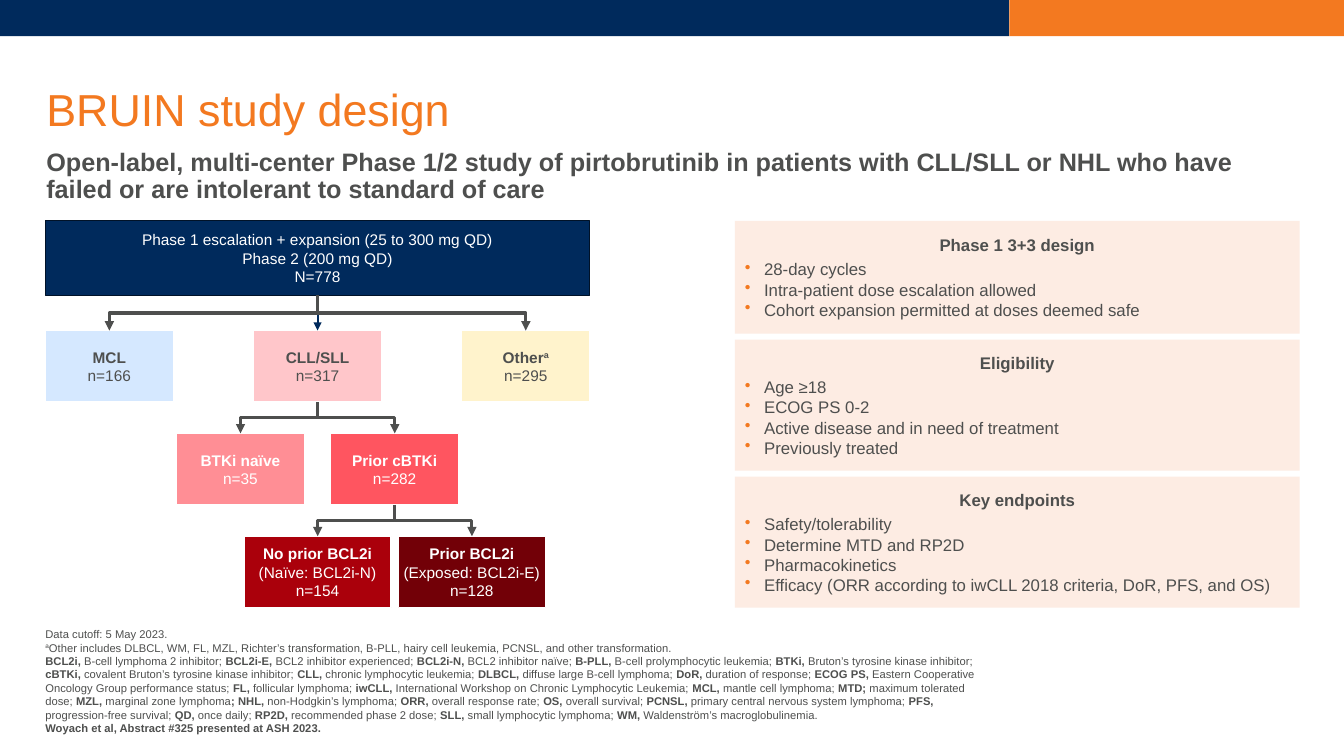
"""Builds the BRUIN study design slide: a patient flow chart beside three panels."""
from dataclasses import dataclass

from lxml import etree
from pptx import Presentation
from pptx.dml.color import RGBColor
from pptx.enum.shapes import MSO_CONNECTOR, MSO_SHAPE
from pptx.enum.text import MSO_ANCHOR, MSO_AUTO_SIZE, PP_ALIGN
from pptx.oxml.ns import qn
from pptx.util import Inches, Pt

RECTANGLE, NO_FIT = MSO_SHAPE.RECTANGLE, MSO_AUTO_SIZE.NONE
STRAIGHT, ELBOW = MSO_CONNECTOR.STRAIGHT, MSO_CONNECTOR.ELBOW
MIDDLE, BOTTOM = MSO_ANCHOR.MIDDLE, MSO_ANCHOR.BOTTOM
LEFT, CENTER = PP_ALIGN.LEFT, PP_ALIGN.CENTER

NAVY, DARK_NAVY = RGBColor(0x00, 0x2A, 0x5C), RGBColor(0x00, 0x12, 0x28)
ORANGE, PEACH = RGBColor(0xF3, 0x79, 0x20), RGBColor(0xFD, 0xEC, 0xE3)
GREY, WHITE = RGBColor(0x4E, 0x4F, 0x4E), RGBColor(0xFF, 0xFF, 0xFF)
BLUE, YELLOW = RGBColor(0xD5, 0xE8, 0xFF), RGBColor(0xFF, 0xF3, 0xCC)
PINK, SALMON = RGBColor(0xFF, 0xC6, 0xCA), RGBColor(0xFF, 0x8E, 0x95)
CORAL, CRIMSON, MAROON = RGBColor(0xFF, 0x55, 0x60), RGBColor(0xAA, 0x00, 0x0B), RGBColor(0x72, 0x00, 0x07)

SLIDE_WIDTH, SLIDE_HEIGHT = 13.33, 7.5
BAR_SPLIT, BAR_HEIGHT = 10.01, 0.36
CONTENT_TOP, AXIS, COLUMN = 2.19, 3.15, 0.765
FIRST_ROW, ROW, BOX_HEIGHT = 3.28, 1.02, 0.71
ROOT_WIDTH, ROOT_HEIGHT = 5.4, 0.74
PANEL_LEFT, PANEL_WIDTH, PANEL_GAP = 7.29, 5.6, 0.06
INDENT = Inches(0.19)


@dataclass
class Group:
    column: float
    row: int
    lines: list[str]
    fill: RGBColor
    color: RGBColor = WHITE
    width: float = 1.27
    inset: float = 0.1

    @property
    def center(self) -> float:
        return AXIS + self.column * COLUMN

    @property
    def top(self) -> float:
        return FIRST_ROW + self.row * ROW


@dataclass
class Panel:
    heading: str
    items: list[str]
    height: float


MCL = Group(-2.7, 0, ["*MCL*", "n=166"], BLUE, GREY)
CLL = Group(0, 0, ["*CLL/SLL*", "n=317"], PINK, GREY)
OTHER = Group(2.7, 0, ["*Other^a^*", "n=295"], YELLOW, GREY)
NAIVE = Group(-1, 1, ["*BTKi naïve*", "n=35"], SALMON)
PRIOR = Group(1, 1, ["*Prior cBTKi*", "n=282"], CORAL)
NO_BCL2I = Group(0, 2, ["*No prior BCL2i*", "(Naïve: BCL2i-N)", "n=154"], CRIMSON, width=1.46, inset=0.04)
BCL2I = Group(2, 2, ["*Prior BCL2i*", "(Exposed: BCL2i-E)", "n=128"], MAROON, width=1.46, inset=0.04)
ROOT_LINES = ["Phase 1 escalation + expansion (25 to 300 mg QD)", "Phase 2 (200 mg QD)", "N=778"]
BRANCHES = [(CLL, NAIVE), (CLL, PRIOR), (PRIOR, NO_BCL2I), (PRIOR, BCL2I)]
PANELS = [
    Panel("Phase 1 3+3 design", ["28-day cycles", "Intra-patient dose escalation allowed",
                                 "Cohort expansion permitted at doses deemed safe"], 1.12),
    Panel("Eligibility", ["Age ≥18", "ECOG PS 0-2", "Active disease and in need of treatment",
                          "Previously treated"], 1.3),
    Panel("Key endpoints", ["Safety/tolerability", "Determine MTD and RP2D", "Pharmacokinetics",
                            "Efficacy (ORR according to iwCLL 2018 criteria, DoR, PFS, and OS)"], 1.3),
]
SUBTITLE = ("*Open-label, multi-center Phase 1/2 study of pirtobrutinib in patients with CLL/SLL or NHL "
            "who have failed or are intolerant to standard of care*")
GLOSSARY = [
    "*BCL2i,* B-cell lymphoma 2 inhibitor", "*BCL2i-E,* BCL2 inhibitor experienced",
    "*BCL2i-N,* BCL2 inhibitor naïve", "*B-PLL,* B-cell prolymphocytic leukemia",
    "*BTKi,* Bruton’s tyrosine kinase inhibitor", "*cBTKi,* covalent Bruton’s tyrosine kinase inhibitor",
    "*CLL,* chronic lymphocytic leukemia", "*DLBCL,* diffuse large B-cell lymphoma", "*DoR,* duration of response",
    "*ECOG PS,* Eastern Cooperative Oncology Group performance status", "*FL,* follicular lymphoma",
    "*iwCLL,* International Workshop on Chronic Lymphocytic Leukemia", "*MCL,* mantle cell lymphoma",
    "*MTD;* maximum tolerated dose", "*MZL,* marginal zone lymphoma*; NHL,* non-Hodgkin’s lymphoma",
    "*ORR,* overall response rate", "*OS,* overall survival", "*PCNSL,* primary central nervous system lymphoma",
    "*PFS,* progression-free survival", "*QD,* once daily", "*RP2D,* recommended phase 2 dose",
    "*SLL,* small lymphocytic lymphoma", "*WM,* Waldenström’s macroglobulinemia.",
]
FOOTNOTES = [
    "Data cutoff: 5 May 2023.",
    "^a^Other includes DLBCL, WM, FL, MZL, Richter’s transformation, B-PLL, hairy cell leukemia, PCNSL, "
    "and other transformation.",
    "; ".join(GLOSSARY),
    "*Woyach et al, Abstract #325 presented at ASH 2023.*",
]


def apply(target, values: dict) -> None:
    for name, value in values.items():
        setattr(target, name, value)


def set_bullet(para, shown: bool) -> None:
    properties = para._p.get_or_add_pPr()
    apply_indent = INDENT if shown else 0
    properties.set("marL", str(apply_indent))
    properties.set("indent", str(-apply_indent))
    if shown:
        color = etree.SubElement(properties, qn("a:buClr"))
        etree.SubElement(color, qn("a:srgbClr")).set("val", str(ORANGE))
        etree.SubElement(properties, qn("a:buChar")).set("char", "•")
    else:
        etree.SubElement(properties, qn("a:buNone"))


def write_para(para, text: str, size: float, color: RGBColor, **layout) -> None:
    apply(para, layout)
    for bold_index, part in enumerate(text.split("*")):
        for raised_index, piece in enumerate(part.split("^")):
            if piece:
                span = para.add_run()
                span.text = piece
                apply(span.font, {"name": "Arial", "size": Pt(size), "bold": bold_index % 2 == 1})
                span.font.color.rgb = color
                if raised_index % 2:
                    span._r.get_or_add_rPr().set("baseline", "30000")


def set_frame(shape, anchor, side: float = 0, edge: float = 0):
    apply(shape.text_frame, {"word_wrap": True, "auto_size": NO_FIT, "vertical_anchor": anchor,
                             "margin_left": Inches(side), "margin_right": Inches(side),
                             "margin_top": Inches(edge), "margin_bottom": Inches(edge)})
    return shape.text_frame


def write_lines(frame, lines: list[str], size: float, color: RGBColor, **layout) -> None:
    for index, line in enumerate(lines):
        para = frame.add_paragraph() if index else frame.paragraphs[0]
        write_para(para, line, size, color, **layout)


def place(shape, *bounds: float) -> None:
    apply(shape, dict(zip(("left", "top", "width", "height"), map(Inches, bounds))))


def add_box(page, bounds: tuple, fill: RGBColor, outline: RGBColor | None = None):
    box = page.shapes.add_shape(RECTANGLE, *map(Inches, bounds))
    box.shadow.inherit = False
    box.fill.solid()
    box.fill.fore_color.rgb = fill
    if outline is None:
        box.line.fill.background()
    else:
        apply(box.line, {"width": Pt(1)})
        box.line.color.rgb = outline
    return box


def add_group(page, group: Group):
    bounds = (group.center - group.width / 2, group.top, group.width, BOX_HEIGHT)
    box = add_box(page, bounds, group.fill, WHITE)
    write_lines(set_frame(box, MIDDLE, group.inset, 0.05), group.lines, 11, group.color, alignment=CENTER)
    return box


def add_arrow(page, kind, begin: tuple, end: tuple, color: RGBColor, width: float):
    arrow = page.shapes.add_connector(kind, *map(Inches, begin + end))
    arrow.line.width = Pt(width)
    arrow.line.color.rgb = color
    etree.SubElement(arrow.line._get_or_add_ln(), qn("a:tailEnd")).set("type", "triangle")
    etree.SubElement(arrow._element.spPr, qn("a:effectLst"))
    return arrow


def add_branch(page, start_x: float, start_y: float, child: Group) -> None:
    shift, drop = child.center - start_x, child.top - start_y
    middle_x, middle_y = start_x + shift / 2, start_y + drop / 2
    reach = drop / 2 if shift > 0 else -drop / 2
    begin = (middle_x + reach, middle_y - abs(shift) / 2)
    end = (middle_x - reach, middle_y + abs(shift) / 2)
    elbow = add_arrow(page, ELBOW, begin, end, GREY, 2.25)
    elbow._element.spPr.find(qn("a:xfrm")).set("rot", str((270 if shift > 0 else 90) * 60000))


def add_flow(page) -> None:
    root = add_box(page, (AXIS - ROOT_WIDTH / 2, CONTENT_TOP, ROOT_WIDTH, ROOT_HEIGHT), NAVY, DARK_NAVY)
    write_lines(set_frame(root, MIDDLE, 0.1, 0.05), ROOT_LINES, 11, WHITE, alignment=CENTER)
    cll_box = add_group(page, CLL)
    for group in (MCL, OTHER, NAIVE, PRIOR, NO_BCL2I, BCL2I):
        add_group(page, group)
    root_bottom = CONTENT_TOP + ROOT_HEIGHT
    stem = add_arrow(page, STRAIGHT, (AXIS, root_bottom), (AXIS, CLL.top), NAVY, 1.5)
    stem.begin_connect(root, 2)
    stem.end_connect(cll_box, 0)
    for child in (OTHER, MCL):
        add_branch(page, AXIS, root_bottom, child)
    for parent, child in BRANCHES:
        add_branch(page, parent.center, parent.top + BOX_HEIGHT, child)


def add_panels(page) -> None:
    top = CONTENT_TOP
    for panel in PANELS:
        frame = set_frame(add_box(page, (PANEL_LEFT, top, PANEL_WIDTH, panel.height), PEACH), MIDDLE, 0.1, 0.05)
        write_para(frame.paragraphs[0], f"*{panel.heading}*", 12, GREY, alignment=CENTER, space_after=Pt(3))
        for item in panel.items:
            para = frame.add_paragraph()
            set_bullet(para, True)
            write_para(para, item, 12, GREY, alignment=LEFT)
        top += panel.height + PANEL_GAP


def main() -> None:
    deck = Presentation()
    apply(deck, {"slide_width": Inches(SLIDE_WIDTH), "slide_height": Inches(SLIDE_HEIGHT)})
    page = deck.slides.add_slide(deck.slide_layouts[1])
    add_box(page, (0, 0, BAR_SPLIT, BAR_HEIGHT), NAVY)
    add_box(page, (BAR_SPLIT, 0, SLIDE_WIDTH - BAR_SPLIT, BAR_HEIGHT), ORANGE)
    title, subtitle = page.shapes.title, page.placeholders[1]
    place(title, 0.46, 0.63, 12.43, 0.72)
    write_lines(set_frame(title, BOTTOM), ["BRUIN study design"], 32, ORANGE, alignment=LEFT, line_spacing=0.9)
    place(subtitle, 0.46, 1.4, 12.43, 0.71)
    frame = set_frame(subtitle, MIDDLE)
    set_bullet(frame.paragraphs[0], False)
    write_lines(frame, [SUBTITLE], 18, GREY, alignment=LEFT, line_spacing=0.9, space_before=Pt(0))
    add_flow(page)
    add_panels(page)
    notes = page.shapes.add_textbox(*map(Inches, (0.45, 6.15, 9.33, 1.14)))
    write_lines(set_frame(notes, BOTTOM), FOOTNOTES, 8, GREY)
    deck.save("out.pptx")


if __name__ == "__main__":
    main()
